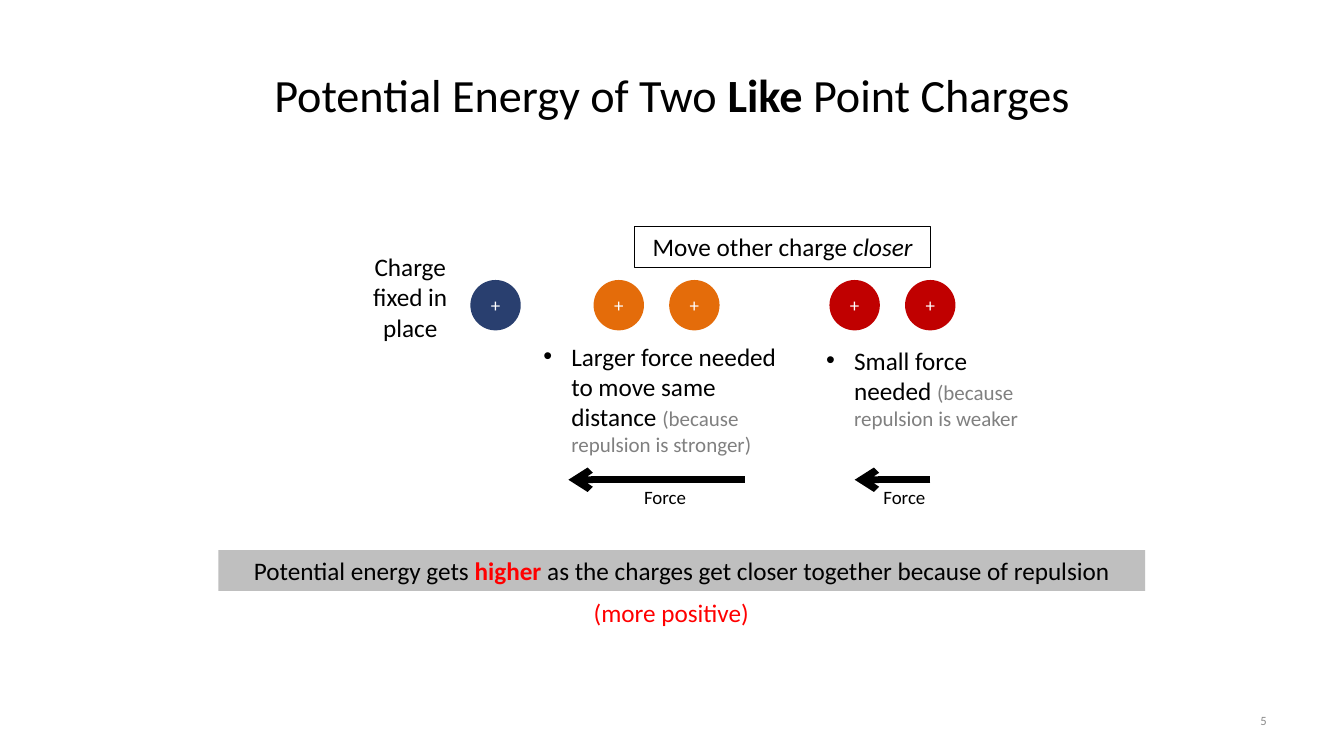
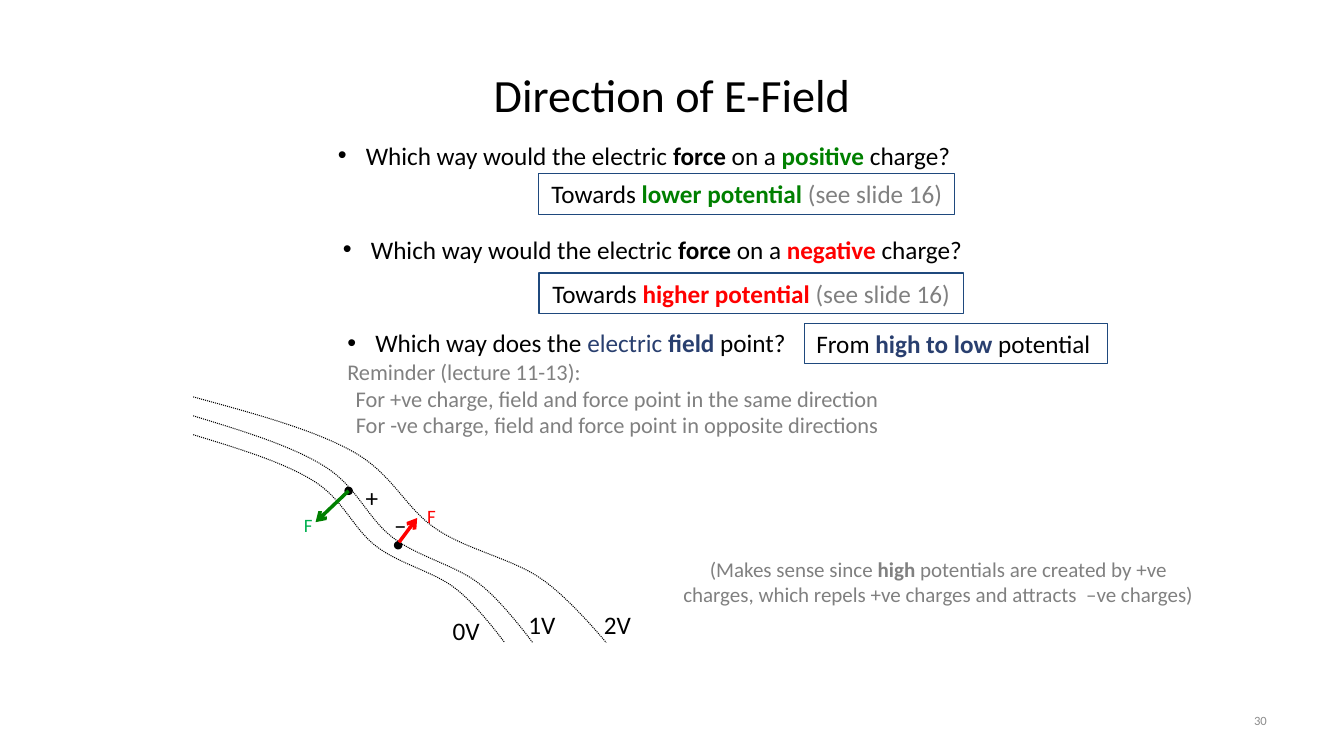
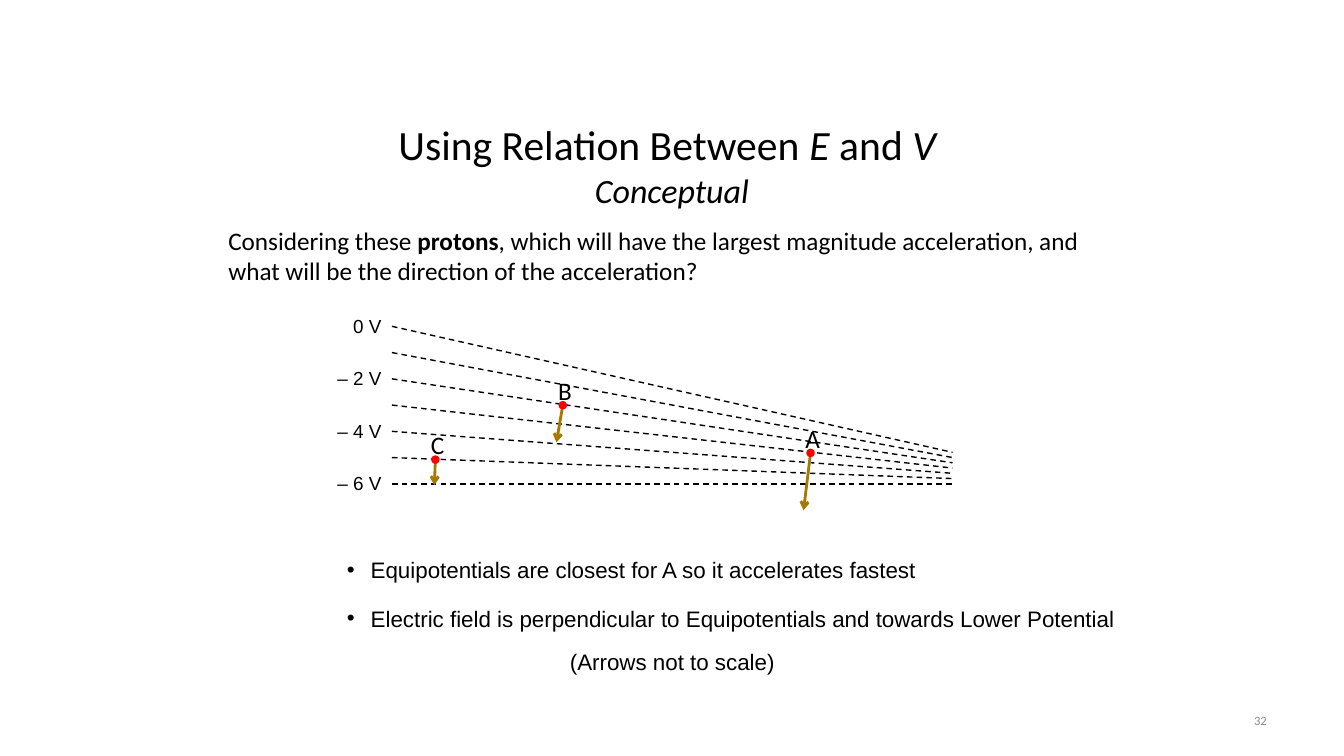
from dataclasses import dataclass

from lxml import etree
from pptx import Presentation
from pptx.dml.color import RGBColor
from pptx.enum import dml, shapes, text
from pptx.oxml import ns
from pptx.util import Pt

LEFT, CENTER, RIGHT = text.PP_ALIGN.LEFT, text.PP_ALIGN.CENTER, text.PP_ALIGN.RIGHT
DASH, DOT = dml.MSO_LINE.DASH, dml.MSO_LINE.ROUND_DOT
RECT, OVAL = shapes.MSO_SHAPE.RECTANGLE, shapes.MSO_SHAPE.OVAL


@dataclass(frozen=True)
class Theme:
    font: str = "Calibri"
    diagram_font: str = "Arial"
    black: str = "000000"
    white: str = "FFFFFF"
    grey: str = "808080"
    page_grey: str = "8C8C8C"
    band: str = "BFBFBF"
    navy: str = "293F6F"
    frame: str = "1F497D"
    orange: str = "E46C0A"
    dark_red: str = "C00000"
    red: str = "FF0000"
    green: str = "008000"
    light_green: str = "00B050"
    gold: str = "A67A00"
    title: float = 33
    body: float = 18
    point: float = 16
    aside: float = 15
    label: float = 13.5
    page_number: float = 9


T = Theme()


@dataclass
class Run:
    text: str
    color: str = ""
    size: float = 0
    bold: bool = False
    italic: bool = False


@dataclass
class Para:
    """A paragraph; an indent above zero gives it a hanging bullet."""
    runs: list
    align: int = CENTER
    indent: float = 0


def bold(words, color=""):
    return Run(words, color, bold=True)


def grey(words, size=0):
    return Run(words, T.grey, size)


class Deck:
    def __init__(self):
        self.prs = Presentation()
        self.prs.slide_width, self.prs.slide_height = Pt(960), Pt(540)
        self.s = None

    def slide(self, number, *title, box=(48, 22, 864, 90), size=T.title):
        self.s = self.prs.slides.add_slide(self.prs.slide_layouts[5])
        sp = self.s.shapes.title
        sp.left, sp.top, sp.width, sp.height = map(Pt, box)
        self.fill_text(sp, title, size, anchor=text.MSO_ANCHOR.MIDDLE)
        self.text((688, 500, 224, 29), Para([str(number)], RIGHT), size=T.page_number,
                  color=T.page_grey, anchor=text.MSO_ANCHOR.MIDDLE)

    def fill_text(self, sp, paras, size=T.body, color=T.black, font=T.font,
                  anchor=text.MSO_ANCHOR.TOP, inset=7.2):
        tf = sp.text_frame
        tf.word_wrap, tf.auto_size = True, text.MSO_AUTO_SIZE.NONE
        tf.vertical_anchor = anchor
        tf.margin_left = tf.margin_right = Pt(inset)
        tf.margin_top = tf.margin_bottom = Pt(3.6)
        for i, para in enumerate(paras):
            p = tf.add_paragraph() if i else tf.paragraphs[0]
            p.alignment = para.align
            if para.indent:
                self.bullet(p, para.indent)
            for run in para.runs:
                run = Run(run) if isinstance(run, str) else run
                r = p.add_run()
                r.text = run.text
                r.font.name, r.font.size = font, Pt(run.size or size)
                r.font.bold, r.font.italic = run.bold, run.italic
                r.font.color.rgb = RGBColor.from_string(run.color or color)

    @staticmethod
    def bullet(p, indent):
        props = p._p.get_or_add_pPr()
        props.set("marL", str(Pt(indent)))
        props.set("indent", str(-Pt(indent)))
        etree.SubElement(props, ns.qn("a:buFont"), typeface="Arial")
        etree.SubElement(props, ns.qn("a:buChar"), char="•")

    def text(self, box, *paras, **style):
        self.fill_text(self.s.shapes.add_textbox(*map(Pt, box)), paras, **style)

    def shape(self, kind, box, *paras, fill=None, line=None, weight=0.75, **style):
        sp = self.s.shapes.add_shape(kind, *map(Pt, box))
        sp.shadow.inherit = False
        if fill:
            sp.fill.solid()
            sp.fill.fore_color.rgb = RGBColor.from_string(fill)
        else:
            sp.fill.background()
        if line:
            self.stroke(sp, line, weight)
        else:
            sp.line.fill.background()
        self.fill_text(sp, paras, **style)

    @staticmethod
    def stroke(sp, color, weight, dash=None):
        sp.line.color.rgb = RGBColor.from_string(color)
        sp.line.width = Pt(weight)
        if dash:
            sp.line.dash_style = dash

    def line(self, start, end, color=T.black, weight=1, dash=None, arrow=False):
        sp = self.s.shapes.add_connector(shapes.MSO_CONNECTOR.STRAIGHT,
                                         *map(Pt, (*start, *end)))
        self.stroke(sp, color, weight, dash)
        if arrow:
            etree.SubElement(sp.line._get_or_add_ln(), ns.qn("a:tailEnd"), type="arrow")
        etree.SubElement(sp._element.spPr, ns.qn("a:effectLst"))

    def curve(self, start, controls):
        """Draw a dotted Bezier curve; each segment takes three control points."""
        builder = self.s.shapes.build_freeform(*map(Pt, start), scale=1.0)
        builder.add_line_segments([(Pt(x), Pt(y)) for x, y in controls], close=False)
        sp = builder.convert_to_shape()
        sp.shadow.inherit = False
        sp.fill.background()
        self.stroke(sp, T.black, 0.75, DOT)
        segments = sp._element.xpath(".//a:lnTo")
        outline = segments[0].getparent()
        for i in range(0, len(segments), 3):
            bezier = etree.SubElement(outline, ns.qn("a:cubicBezTo"))
            for segment in segments[i:i + 3]:
                bezier.append(segment[0])
                outline.remove(segment)

    def charge(self, x, color):
        self.shape(OVAL, (x, 200, 36, 36), Para(["+"]), fill=color, size=T.label,
                   color=T.white, anchor=text.MSO_ANCHOR.MIDDLE)

    def dot(self, x, y, color):
        self.shape(OVAL, (x - 2, y - 2, 4, 4), fill=color, line=color, weight=2)

    def symbol(self, x, y, sign):
        """Centre one character on x, below y."""
        self.text((x - 10, y, 20, 29), Para([sign]), inset=0)


def like_charges(d):
    d.slide(5, Para(["Potential Energy of Two ", bold("Like"), " Point Charges"]))
    d.charge(336, T.navy)
    for left, color in ((424, T.orange), (592.5, T.dark_red)):
        for x in (left, left + 54):
            d.charge(x, color)
    d.text((241, 176, 104, 73), Para(["Charge fixed in place"]))
    d.shape(RECT, (453, 162, 212, 29),
            Para(["Move other charge ", Run("closer", italic=True)]), line=T.black)
    d.text((381, 240, 184, 91),
           Para(["Larger force needed to move same distance ",
                 grey("(because repulsion is stronger)", T.aside)], LEFT, 20))
    d.text((583, 243, 153, 69),
           Para(["Small force needed ",
                 grey("(because repulsion is weaker", T.aside)], LEFT, 20))
    for tail, tip, label in ((532, 406, 453), (664.5, 610.5, 624)):
        d.line((tail, 342.7), (tip, 342.7), weight=5, arrow=True)
        d.text((label, 343, 72, 24), Para(["Force"], LEFT), size=T.label)
    d.shape(RECT, (156, 393, 662, 29),
            Para(["Potential energy gets ", bold("higher", T.red),
                  " as the charges get closer together because of repulsion"]),
            fill=T.band)
    d.text((403, 423, 153, 29), Para(["(more positive)"]), color=T.red)


def field_direction(d):
    d.slide(30, Para(["Direction of E-Field"]))
    d.text((214.5, 96.5, 495, 29),
           Para(["Which way would the electric ", bold("force"), " on a ",
                 bold("positive", T.green), " charge? "], indent=20))
    d.text((209.5, 163.5, 513, 29),
           Para(["Which way would the electric ", bold("force "), "on a ",
                 bold("negative ", T.red), "charge?"], indent=20))
    d.text((241, 230.4, 396, 87),
           Para(["Which way does the ", Run("electric", T.navy),
                 bold(" field ", T.navy), "point?"], LEFT, 20),
           Para([grey("Reminder (lecture 11-13):", T.point)], LEFT),
           *(Para([grey(f" For {sign}ve charge, field and force point in {way}", T.point)])
             for sign, way in (("+", "the same direction"), ("-", "opposite directions"))))

    answers = (((385, 124, 297, 29),
                ["Towards ", bold("lower potential ", T.green), grey("(see slide 16)")]),
               ((385, 195, 303, 29),
                ["Towards ", bold("higher potential ", T.red), grey("(see slide 16)")]),
               ((575, 231, 216, 29),
                ["From ", bold("high to low ", T.navy), "potential "]))
    for box, runs in answers:
        d.shape(RECT, box, Para(runs), line=T.frame)

    # One equipotential shape, in percent of its width and height
    bends = ((14.4, 6.6), (28.8, 13.1), (38.5, 22.1),
             (48.3, 31.1), (51.2, 45.1), (58.8, 53.7),
             (66.3, 62.3), (77.6, 66), (84.4, 74.2),
             (91.2, 82), (100, 100), (100, 100))
    left, bottom = 138, 459
    for width, height in ((222.5, 148.5), (242.5, 162), (295, 175.5)):
        top = bottom - height
        d.curve((left, top), [(left + width * x / 100, top + height * y / 100)
                              for x, y in bends])
    for volts, x, y in ((0, 313, 436), (1, 367, 432), (2, 421, 432)):
        d.text((x, y, 40, 29), Para([f"{volts}V"]))

    d.dot(249, 350.6, T.black)
    d.symbol(265.7, 340.6, "+")
    d.line((249, 350.6), (225.4, 373), T.green, 2.5, arrow=True)
    d.dot(284.4, 389.5, T.black)
    d.symbol(286, 360, "–")
    d.line((285, 387.4), (298, 370), T.red, 2.5, arrow=True)
    for x, y, color in ((210, 363, T.light_green), (298, 357, T.red)):
        d.text((x, y, 20, 24), Para(["F"], LEFT), size=T.label, color=color)

    d.text((476.5, 394, 387.5, 44),
           Para(["(Makes sense since ", bold("high "),
                 "potentials are created by +ve charges, which repels +ve charges"
                 " and attracts  –ve charges)"]), size=T.aside, color=T.grey)


def field_and_potential(d):
    d.slide(32,
            Para(["Using Relation Between ", Run("E", italic=True), " and ",
                  Run("V ", italic=True)]),
            Para([Run("Conceptual", size=24.3, italic=True)]),
            box=(228, 83.5, 504, 68), size=29.7)
    d.text((156, 157.5, 652, 51),
           Para(["Considering these ", bold("protons"),
                 ", which will have the largest magnitude acceleration, and what"
                 " will be the direction of the acceleration?"], LEFT))

    bottom = 345.6
    for i in range(7):
        d.line((280, bottom - 18.75 * i), (680.4, bottom - 3.75 * i), dash=DASH)
    for i, volts in enumerate(("0 V", "– 2 V", "– 4 V", "– 6 V")):
        d.text((231, 221 + 37.5 * i, 48.5, 24), Para([volts], RIGHT),
               size=T.label, font=T.diagram_font)

    protons = (("A", 579, 323.5, 574, 364.5),
               ("B", 402, 289.5, 397.5, 316),
               ("C", 311, 328.3, 310.3, 346.5))
    for name, x, y, tip_x, tip_y in protons:
        d.line((x, y), (tip_x, tip_y), T.gold, 2, arrow=True)
        d.dot(x, y, T.red)
        d.symbol(x + 1.5, y - 25, name)

    notes = (((229, 394, 444, 26.5), 17,
              "Equipotentials are closest for A so it accelerates fastest"),
             ((222, 428.5, 600, 26.5), 17,
              "Electric field is perpendicular to Equipotentials and towards Lower Potential"),
             ((286.5, 459.5, 387.5, 26.5), 0, "(Arrows not to scale)"))
    for box, indent, words in notes:
        d.text(box, Para([words], indent=indent), size=T.point, font=T.diagram_font)


def main():
    d = Deck()
    for build in (like_charges, field_direction, field_and_potential):
        build(d)
    d.prs.save("out.pptx")


if __name__ == "__main__":
    main()
